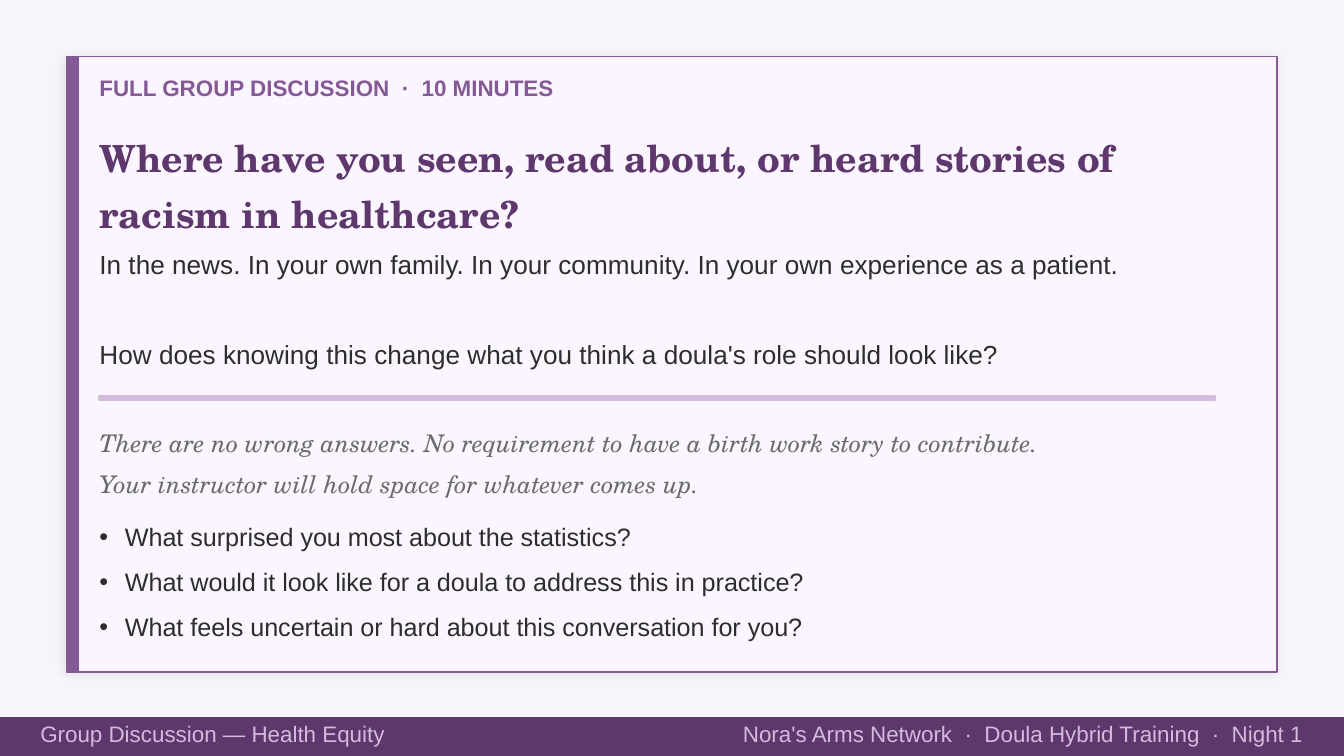
import pptx
import pptx.dml.color
import pptx.enum.shapes
import pptx.enum.text
import pptx.oxml
import pptx.oxml.ns
import pptx.util
from pptx.util import Inches

COLORS = {
    "background": "F8F5FA",
    "card": "FAF5FF",
    "accent": "845995",
    "deep": "5E376C",
    "pale": "D4BADD",
    "ink": "2D2D2D",
    "muted": "6B6B6B",
}
SANS = "Arial"
SERIF = "TeX Gyre Schola"
TEXT_LEFT = 0.74
TEXT_WIDTH = 8.4
BULLET_INDENT = 0.19


def rgb(name):
    return pptx.dml.color.RGBColor.from_string(COLORS[name])


def add_rectangle(slide, left, top, width, height, fill, line=None):
    shape = slide.shapes.add_shape(
        pptx.enum.shapes.MSO_SHAPE.RECTANGLE,
        Inches(left), Inches(top), Inches(width), Inches(height))
    shape.shadow.inherit = False
    shape.fill.solid()
    shape.fill.fore_color.rgb = rgb(fill)
    shape.line.color.rgb = rgb(line or fill)
    shape.line.width = pptx.util.Pt(1)
    return shape


def add_soft_shadow(shape):
    """Give the shape a faint blurred shadow towards the lower left."""
    effects = shape._element.spPr.find(pptx.oxml.ns.qn("a:effectLst"))
    effects.append(pptx.oxml.parse_xml(
        f'<a:outerShdw {pptx.oxml.ns.nsdecls("a")} blurRad="{pptx.util.Pt(5)}" '
        f'dist="{pptx.util.Pt(2)}" dir="{135 * 60000}" algn="bl" rotWithShape="0">'
        '<a:srgbClr val="000000"><a:alpha val="8000"/></a:srgbClr></a:outerShdw>'))


def add_bullet(paragraph):
    properties = paragraph._p.get_or_add_pPr()
    properties.set("marL", str(Inches(BULLET_INDENT)))
    properties.set("indent", str(-Inches(BULLET_INDENT)))
    namespace = pptx.oxml.ns.nsdecls("a")
    for element in (
            f'<a:buClr {namespace}><a:srgbClr val="{COLORS["ink"]}"/></a:buClr>',
            f'<a:buSzPct {namespace} val="100000"/>',
            f'<a:buFont {namespace} typeface="{SANS}"/>',
            f'<a:buChar {namespace} char="•"/>'):
        properties.append(pptx.oxml.parse_xml(element))


def fill_text(shape, lines, size, color, font=SANS, bold=False, italic=False,
              spacing=1.0, gap=0, bullets=False, align="LEFT"):
    """Write one paragraph per line, with gap points between paragraphs."""
    frame = shape.text_frame
    frame.word_wrap = True
    frame.auto_size = pptx.enum.text.MSO_AUTO_SIZE.NONE
    frame.vertical_anchor = pptx.enum.text.MSO_ANCHOR.TOP
    frame.margin_left = frame.margin_right = 0
    frame.margin_top = frame.margin_bottom = 0
    for index, line in enumerate(lines):
        paragraph = frame.add_paragraph() if index else frame.paragraphs[0]
        paragraph.text = line
        paragraph.alignment = pptx.enum.text.PP_ALIGN[align]
        paragraph.line_spacing = spacing
        paragraph.space_before = pptx.util.Pt(gap if index else 0)
        if bullets:
            add_bullet(paragraph)
        paragraph.font.name = font
        paragraph.font.size = pptx.util.Pt(size)
        paragraph.font.bold = bold
        paragraph.font.italic = italic
        paragraph.font.color.rgb = rgb(color)


def add_text(slide, left, top, width, height, lines, size, color, **style):
    box = slide.shapes.add_textbox(
        Inches(left), Inches(top), Inches(width), Inches(height))
    fill_text(box, lines, size, color, **style)


def place_title(slide, top, height, text):
    title = slide.shapes.title
    title.left, title.top = Inches(TEXT_LEFT), Inches(top)
    title.width, title.height = Inches(TEXT_WIDTH), Inches(height)
    fill_text(title, [text], 20, "deep", font=SERIF, bold=True, spacing=1.25)
    slide.shapes._spTree.append(title._element)  # in front of the card


def add_card(slide):
    left, top, height = 0.5, 0.42, 4.58
    add_soft_shadow(add_rectangle(slide, left, top, 9, height, "card", "accent"))
    add_rectangle(slide, left, top, 0.08, height, "accent")


def add_footer(slide, left_text, right_text):
    add_rectangle(slide, 0, 5.34, 10, 0.28, "deep")
    add_text(slide, 0.3, 5.36, 5.5, 0.25, [left_text], 12, "pale")
    add_text(slide, 0, 5.36, 9.7, 0.25, [right_text], 12, "pale", align="RIGHT")


def main():
    presentation = pptx.Presentation()
    presentation.slide_width = Inches(10)
    presentation.slide_height = Inches(10 * 9 / 16)
    slide = presentation.slides.add_slide(presentation.slide_layouts[5])
    slide.background.fill.solid()
    slide.background.fill.fore_color.rgb = rgb("background")

    add_card(slide)
    add_text(slide, TEXT_LEFT, 0.55, TEXT_WIDTH, 0.26,
             ["FULL GROUP DISCUSSION  ·  10 MINUTES"], 12, "accent", bold=True)
    place_title(slide, 0.92, 0.72, "Where have you seen, read about, or heard "
                "stories of racism in healthcare?")
    add_text(slide, TEXT_LEFT, 1.74, TEXT_WIDTH, 1.05, [
        "In the news. In your own family. In your community. "
        "In your own experience as a patient.",
        "How does knowing this change what you think a doula's role should look like?",
    ], 14, "ink", spacing=1.45, gap=24)
    add_rectangle(slide, TEXT_LEFT, 2.95, 8.3, 0.03, "pale")
    add_text(slide, TEXT_LEFT, 3.1, TEXT_WIDTH, 0.7, [
        "There are no wrong answers. No requirement to have a birth work story "
        "to contribute.",
        "Your instructor will hold space for whatever comes up.",
    ], 13, "muted", font=SERIF, italic=True, spacing=1.4)
    add_text(slide, TEXT_LEFT, 3.88, TEXT_WIDTH, 1.2, [
        "What surprised you most about the statistics?",
        "What would it look like for a doula to address this in practice?",
        "What feels uncertain or hard about this conversation for you?",
    ], 13.5, "ink", gap=8, bullets=True)
    add_footer(slide, "Group Discussion — Health Equity",
               "Nora's Arms Network  ·  Doula Hybrid Training  ·  Night 1")
    presentation.save("out.pptx")


if __name__ == "__main__":
    main()
